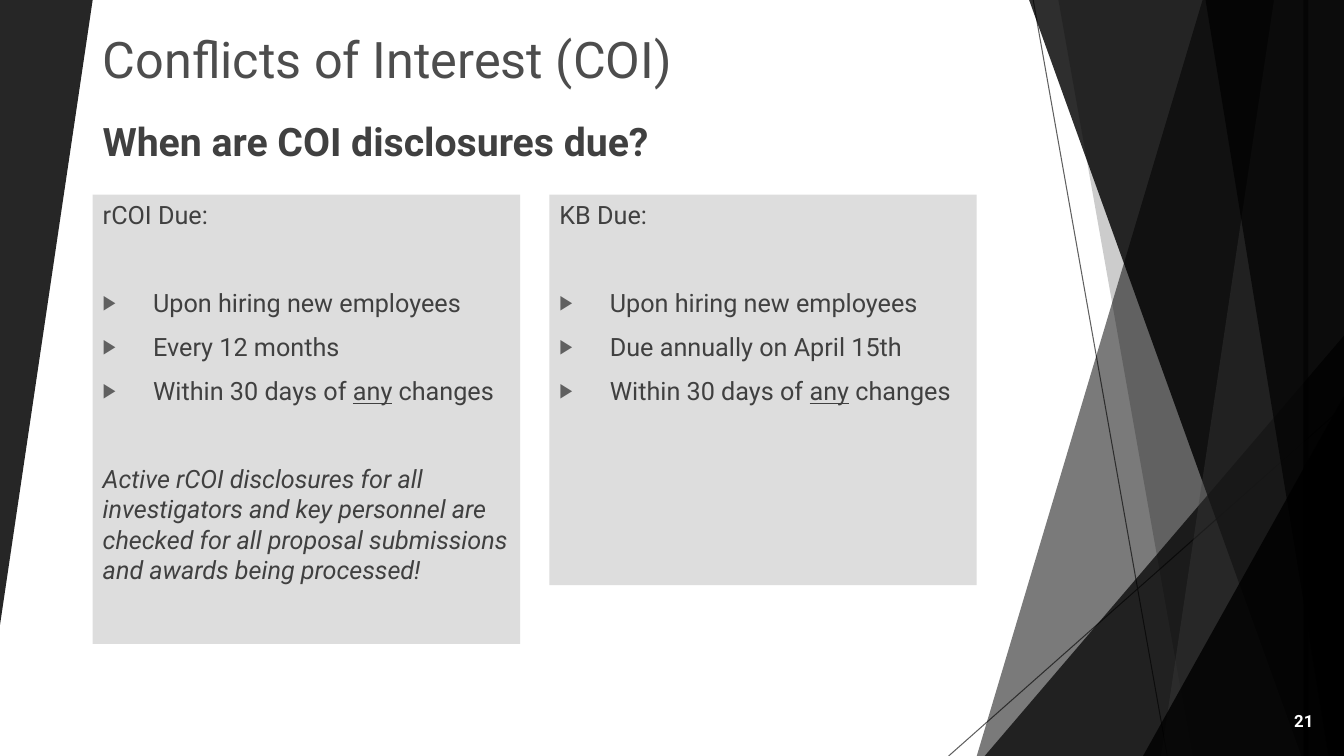
from dataclasses import dataclass

from lxml.etree import SubElement
from pptx import Presentation
from pptx.dml.color import RGBColor as Color
from pptx.enum.shapes import MSO_CONNECTOR as Connector, MSO_SHAPE as Preset
from pptx.enum.text import MSO_ANCHOR as Anchor, MSO_AUTO_SIZE as AutoSize, PP_ALIGN as Align
from pptx.oxml.ns import qn
from pptx.util import Pt

WIDTH, HEIGHT = 960, 540


@dataclass(frozen=True)
class Theme:
    font: str = "Roboto"
    title: str = "4D4D4D"
    text: str = "404040"
    bullet: str = "606060"
    panel: str = "DDDDDD"
    line: str = "5F5F5F"
    shard: str = "000000"
    light_shard: str = "404040"
    number: str = "FFFFFF"
    title_size: int = 36
    heading_size: int = 28
    body_size: int = 18
    number_size: int = 12
    gap: int = 10
    section_gap: int = 41


THEME = Theme()

# Top left, top right, bottom right and bottom left x, then colour and opacity.
BANDS = {
    "wide": (859, 934.6, 934.6, 697.7, THEME.shard, 52),
    "pale": (756, 960, 960, 851.8, THEME.shard, 20),
    "dark": (735.1, 960, 960, 929.5, THEME.shard, 82),
    "narrow": (910.1, 931, 931, 829.4, THEME.light_shard, 34),
    "edge": (861.1, 960, 960, 949, THEME.shard, 65),
}
RCOI = [
    ("plain", "rCOI Due:"),
    ("bullet", "Upon hiring new employees"),
    ("bullet", "Every 12 months"),
    ("bullet", "Within 30 days of _any_ changes"),
    ("italic", "Active rCOI disclosures for all investigators and key personnel "
               "are checked for all proposal submissions and awards being processed!"),
]
KB = [
    ("plain", "KB Due:"),
    ("bullet", "Upon hiring new employees"),
    ("bullet", "Due annually on April 15th"),
    ("bullet", "Within 30 days of _any_ changes"),
]


def place(shape, left, top, width, height):
    shape.left, shape.top = Pt(left), Pt(top)
    shape.width, shape.height = Pt(width), Pt(height)


def paint(shape, color, opacity):
    shape.shadow.inherit = False
    shape.line.fill.background()
    shape.fill.solid()
    shape.fill.fore_color.rgb = Color.from_string(color)
    fill_color = shape.fill._xPr.find(qn("a:solidFill"))[0]
    SubElement(fill_color, qn("a:alpha")).set("val", str(opacity * 1000))


def add_band(page, top_left, top_right, bottom_right, bottom_left, color, opacity):
    builder = page.shapes.build_freeform(Pt(top_left), 0)
    builder.add_line_segments([(Pt(top_right), 0), (Pt(bottom_right), Pt(HEIGHT)),
                               (Pt(bottom_left), Pt(HEIGHT))], close=True)
    paint(builder.convert_to_shape(), color, opacity)


def add_corner(page, left, top, width, height, opacity, rotation=0):
    """Add a right-angled triangle."""
    corner = page.shapes.add_shape(Preset.ISOSCELES_TRIANGLE, Pt(left), Pt(top),
                                   Pt(width), Pt(height))
    corner.adjustments[0] = 1
    corner.rotation = rotation
    paint(corner, THEME.shard, opacity)


def add_line(page, *ends):
    line = page.shapes.add_connector(Connector.STRAIGHT, *map(Pt, ends))
    line.line.color.rgb = Color.from_string(THEME.line)
    line.line.width = Pt(0.75)
    SubElement(line._element.spPr, qn("a:effectLst"))


def add_backdrop(page):
    add_line(page, 738, 0, 833.8, HEIGHT)
    add_line(page, WIDTH, 290.2, 677.6, HEIGHT)
    add_band(page, *BANDS["wide"])
    add_band(page, *BANDS["pale"])
    add_corner(page, 703.4, 239.8, 256.6, 300.2, 72)
    for name in ("dark", "narrow", "edge"):
        add_band(page, *BANDS[name])
    add_corner(page, 816.5, 283, 143.5, 257, 80)
    add_corner(page, 0, 0, 66.2, 446.4, 85, rotation=180)


def style(para, size, color, bold=False, italic=False):
    font = para.font
    font.name, font.size = THEME.font, Pt(size)
    font.bold, font.italic = bold, italic
    font.color.rgb = Color.from_string(color)


def set_bullet(para, shown):
    props = para._p.get_or_add_pPr()
    indent = Pt(36) if shown else 0
    props.set("marL", str(indent))
    props.set("indent", str(-indent))
    if not shown:
        SubElement(props, qn("a:buNone"))
        return
    SubElement(SubElement(props, qn("a:buClr")), qn("a:srgbClr")).set("val", THEME.bullet)
    SubElement(props, qn("a:buSzPct")).set("val", "80000")
    SubElement(props, qn("a:buChar")).set("char", "▶")


def fill_panel(panel, lines, *bounds):
    """Write lines of (kind, text); text between underscores is underlined."""
    place(panel, *bounds)
    panel.fill.solid()
    panel.fill.fore_color.rgb = Color.from_string(THEME.panel)
    frame = panel.text_frame
    frame.auto_size = AutoSize.NONE
    previous = None
    for kind, text in lines:
        para = frame.add_paragraph() if previous else frame.paragraphs[0]
        para.space_before = Pt(0 if previous is None else
                               THEME.gap if kind == previous else THEME.section_gap)
        set_bullet(para, kind == "bullet")
        style(para, THEME.body_size, THEME.text, italic=kind == "italic")
        for index, part in enumerate(text.split("_")):
            span = para.add_run()
            span.text = part
            if index % 2:
                span.font.underline = True
        previous = kind


def fill_title(title, text):
    place(title, 66.2, 16.6, 622, 103.7)
    frame = title.text_frame
    frame.auto_size = AutoSize.NONE
    frame.vertical_anchor = Anchor.TOP
    frame.text = text
    para = frame.paragraphs[0]
    para.alignment = Align.LEFT
    style(para, THEME.title_size, THEME.title)


def add_label(page, text, bounds, size, color, anchor, align):
    frame = page.shapes.add_textbox(*map(Pt, bounds)).text_frame
    frame.word_wrap = True
    frame.vertical_anchor = anchor
    frame.text = text
    para = frame.paragraphs[0]
    para.alignment = align
    style(para, size, color, bold=True)


def main():
    deck = Presentation()
    deck.slide_width, deck.slide_height = Pt(WIDTH), Pt(HEIGHT)
    page = deck.slides.add_slide(deck.slide_layouts.get_by_name("Two Content"))
    title, rcoi, kb = page.placeholders
    add_backdrop(page)
    for holder in (rcoi, title, kb):
        page.shapes._spTree.append(holder.element)  # bring in front of the backdrop
    fill_title(title, "Conflicts of Interest (COI)")
    fill_panel(rcoi, RCOI, 66.2, 139, 305.3, 321)
    fill_panel(kb, KB, 392.4, 139, 305.3, 279)
    add_label(page, "When are COI disclosures due?", (66.2, 68.4, 640.8, 52.6),
              THEME.heading_size, THEME.text, Anchor.BOTTOM, Align.LEFT)
    add_label(page, "21", (879.8, 501.1, 65.5, 28.1),
              THEME.number_size, THEME.number, Anchor.MIDDLE, Align.RIGHT)
    deck.save("out.pptx")


if __name__ == "__main__":
    main()
